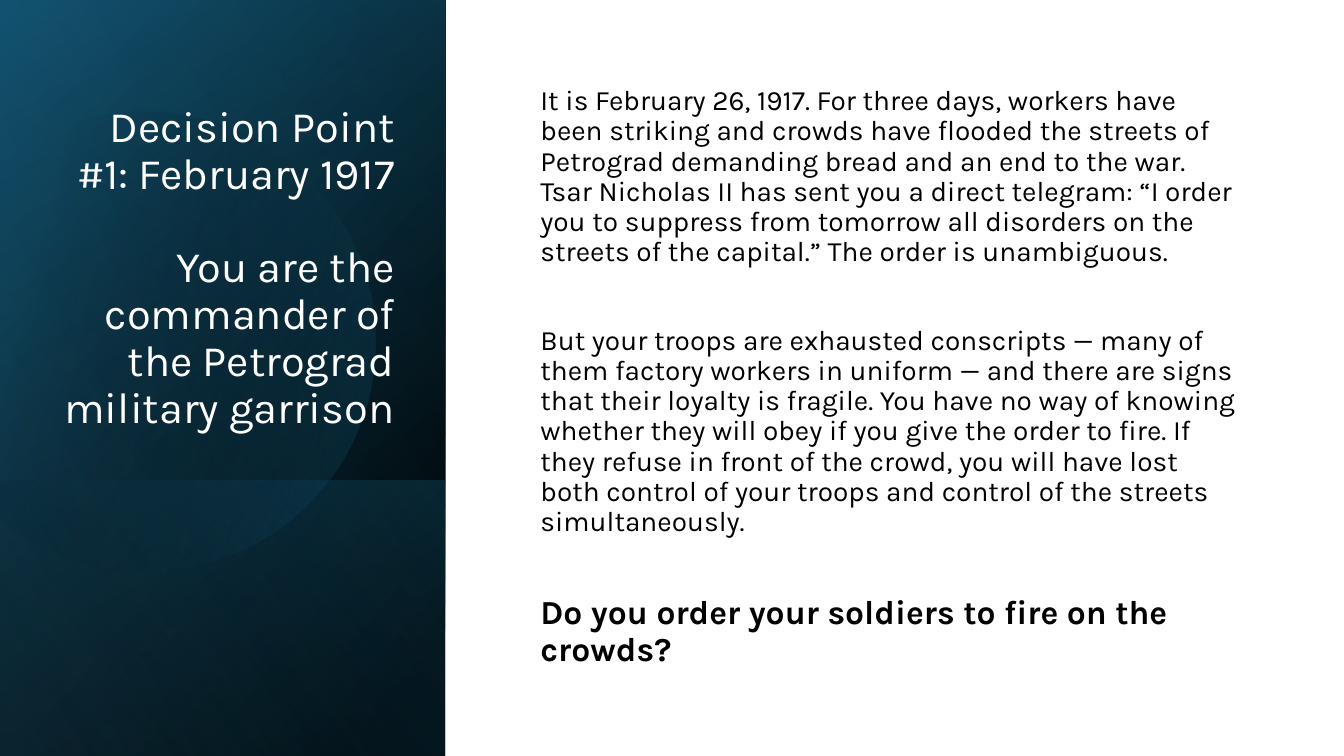
import math

import pptx
import pptx.dml.color
import pptx.enum.shapes
import pptx.enum.text
import pptx.oxml
import pptx.oxml.ns
import pptx.util

Cm = pptx.util.Cm
Pt = pptx.util.Pt
COLORS = {
    "white": "FFFFFF",
    "black": "000000",
    "navy": "104862",
    "teal": "156082",
    "sky": "46B1E1",
}
SLIDE_WIDTH, SLIDE_HEIGHT = 33.87, 19.05
SIDEBAR_WIDTH = 11.22


def fill_gradient(shape, stops, angle):
    shape.shadow.inherit = False
    shape.line.fill.background()
    stop_xml = "".join(
        f'<a:gs pos="{position * 1000}"><a:srgbClr val="{COLORS[color]}">'
        f'<a:alpha val="{opacity * 1000}"/></a:srgbClr></a:gs>'
        for position, color, opacity in stops
    )
    gradient = pptx.oxml.parse_xml(
        f'<a:gradFill {pptx.oxml.ns.nsdecls("a")} rotWithShape="1">'
        f'<a:gsLst>{stop_xml}</a:gsLst><a:lin ang="{angle * 60000}" scaled="0"/></a:gradFill>'
    )
    shape.fill.background()
    properties = shape._element.spPr
    properties.replace(properties.find(pptx.oxml.ns.qn("a:noFill")), gradient)


def add_text(left, top, width, height, anchor, align, color, paragraphs):
    box = page.shapes.add_textbox(Cm(left), Cm(top), Cm(width), Cm(height))
    frame = box.text_frame
    frame.word_wrap = True
    frame.vertical_anchor = anchor
    frame.text = "\n".join(text for text, size, bold, gap in paragraphs)
    for para, (text, size, bold, gap) in zip(frame.paragraphs, paragraphs):
        para.alignment = align
        para.line_spacing = 0.9
        para.space_before = Pt(gap)
        for span in para.runs:
            span.font.name = "Karla"
            span.font.size = Pt(size)
            span.font.bold = bold
            span.font.color.rgb = pptx.dml.color.RGBColor.from_string(COLORS[color])


deck = pptx.Presentation()
deck.slide_width = Cm(SLIDE_WIDTH)
deck.slide_height = Cm(SLIDE_HEIGHT)
page = deck.slides.add_slide(deck.slide_layouts[6])
rectangle = pptx.enum.shapes.MSO_SHAPE.RECTANGLE

backdrop = page.shapes.add_shape(rectangle, 0, 0, deck.slide_width, deck.slide_height)
backdrop.shadow.inherit = False
backdrop.fill.solid()
backdrop.fill.fore_color.rgb = pptx.dml.color.RGBColor.from_string(COLORS["white"])
backdrop.line.fill.background()

panels = [
    (0, [(8, "black", 100), (100, "navy", 100)], 50),
    (0, [(0, "black", 0), (99, "teal", 46)], 30),
    (12.1, [(2, "teal", 29), (100, "black", 30)], 130),
    ("disc", [(29, "black", 0), (100, "teal", 43)], 30),
    (0, [(0, "black", 0), (99, "sky", 11)], 120),
]
DISC_X, DISC_Y, DISC_RADIUS = 3.64, 8.5, 5.8
DISC_ANGLES = [-118, -90, 0, 90, 150]

for top, stops, angle in panels:
    if top == "disc":
        corners = [
            (
                Cm(DISC_X + DISC_RADIUS * math.cos(math.radians(degree))),
                Cm(DISC_Y + DISC_RADIUS * math.sin(math.radians(degree))),
            )
            for degree in DISC_ANGLES
        ]
        builder = page.shapes.build_freeform(*corners[0])
        builder.add_line_segments(corners[1:], close=True)
        panel = builder.convert_to_shape()
        panel.rotation = -16.1
        sides = list(panel._element.iter(pptx.oxml.ns.qn("a:lnTo")))
        for side, start, end in zip(sides, DISC_ANGLES, DISC_ANGLES[1:]):
            arc = pptx.oxml.parse_xml(
                f'<a:arcTo {pptx.oxml.ns.nsdecls("a")} wR="{Cm(DISC_RADIUS)}" '
                f'hR="{Cm(DISC_RADIUS)}" stAng="{start % 360 * 60000}" '
                f'swAng="{(end - start) * 60000}"/>'
            )
            side.getparent().replace(side, arc)
    else:
        length = SLIDE_HEIGHT - top
        panel = page.shapes.add_shape(
            rectangle,
            Cm((SIDEBAR_WIDTH - length) / 2),
            Cm(top + (length - SIDEBAR_WIDTH) / 2),
            Cm(length),
            Cm(SIDEBAR_WIDTH),
        )
        panel.rotation = 90
        panel._element.spPr.xfrm.set("flipH", "1")
    fill_gradient(panel, stops, angle)

add_text(
    1.3, 1.63, 8.89, 9.4,
    pptx.enum.text.MSO_ANCHOR.BOTTOM, pptx.enum.text.PP_ALIGN.RIGHT, "white",
    [
        ("Decision Point #1: February 1917", 31, False, 0),
        ("You are the commander of the Petrograd military garrison", 31, False, 33),
    ],
)
add_text(
    13.37, 1.8, 18.21, 15.42,
    pptx.enum.text.MSO_ANCHOR.MIDDLE, pptx.enum.text.PP_ALIGN.LEFT, "black",
    [
        (
            "It is February 26, 1917. For three days, workers have been striking and crowds "
            "have flooded the streets of Petrograd demanding bread and an end to the war. "
            "Tsar Nicholas II has sent you a direct telegram: “I order you to suppress from "
            "tomorrow all disorders on the streets of the capital.” The order is unambiguous.",
            20, False, 0,
        ),
        (
            "But your troops are exhausted conscripts — many of them factory workers in "
            "uniform — and there are signs that their loyalty is fragile. You have no way of "
            "knowing whether they will obey if you give the order to fire. If they refuse in "
            "front of the crowd, you will have lost both control of your troops and control "
            "of the streets simultaneously.",
            20, False, 41.5,
        ),
        ("Do you order your soldiers to fire on the crowds?", 24, True, 41.5),
    ],
)

deck.save("out.pptx")
